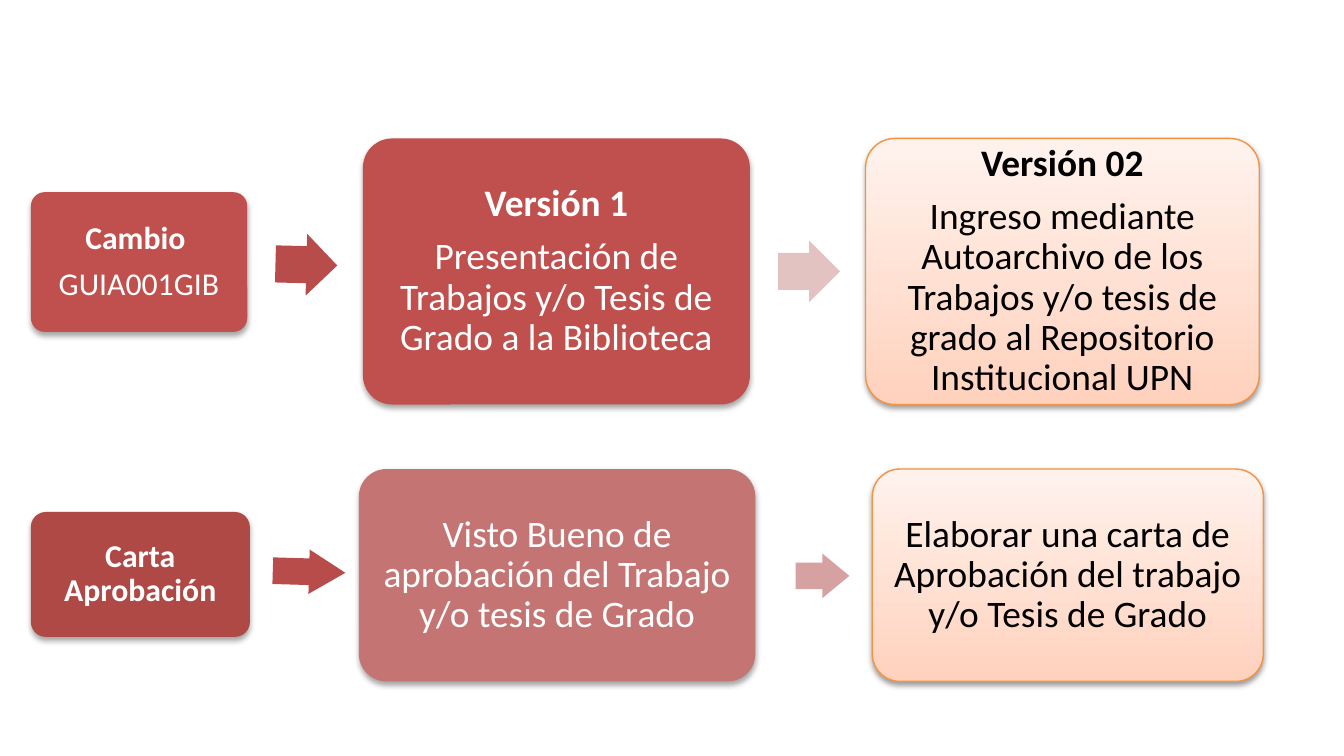
"""Build a slide comparing the earlier and new versions of two library procedures."""
from lxml import etree
from pptx import Presentation
from pptx.dml.color import RGBColor
from pptx.enum.shapes import MSO_SHAPE
from pptx.enum.text import MSO_ANCHOR, PP_ALIGN
from pptx.oxml.ns import qn
from pptx.util import Inches, Pt

ROUNDED, ARROW = MSO_SHAPE.ROUNDED_RECTANGLE, MSO_SHAPE.RIGHT_ARROW
MIDDLE, CENTER = MSO_ANCHOR.MIDDLE, PP_ALIGN.CENTER
FONT = "Calibri"
WIDTH = 10
HEIGHT = WIDTH * 9 / 16
COLORS = {
    "red": "C0504D", "dark red": "AE4946", "rose": "C47472",
    "arrow red": "B74C4A", "arrow pale": "E3C3C2", "arrow rose": "D6A1A1",
    "peach": "FFD2BD", "cream": "FFF2ED", "orange": "F69240",
    "white": "FFFFFF", "black": "000000",
}
TOPIC = {"size": 17, "inset": 0.11}
DETAIL = {"size": 20, "inset": 0.15}
NEW = {**DETAIL, "color": "black"}

# Each card: box, fill (None for the gradient), corner, (text, bold) lines, format
CARDS = [
    ((0.23, 1.43, 1.61, 1.04), "red", 0.1,
     [("Cambio ", True), ("GUIA001GIB", False)], TOPIC),
    ((2.7, 1.03, 2.88, 1.98), "red", 0.11,
     [("Versión 1", True),
      ("Presentación de Trabajos y/o Tesis de Grado a la Biblioteca", False)], DETAIL),
    ((6.44, 1.03, 2.93, 1.98), None, 0.11,
     [("Versión 02", True),
      ("Ingreso mediante Autoarchivo de los Trabajos y/o tesis de grado "
       "al Repositorio Institucional UPN", False)], NEW),
    ((0.23, 3.81, 1.63, 0.93), "dark red", 0.12, [("Carta Aprobación", True)], TOPIC),
    ((2.67, 3.49, 2.95, 1.58), "rose", 0.13,
     [("Visto Bueno de aprobación del Trabajo y/o tesis de Grado", False)], DETAIL),
    ((6.49, 3.49, 2.91, 1.58), None, 0.13,
     [("Elaborar una carta de Aprobación del trabajo y/o Tesis de Grado", False)], NEW),
]
ARROWS = [
    ((2.05, 1.74, 0.46, 0.46), "arrow red", 1.5),
    ((5.79, 1.79, 0.46, 0.46), "arrow pale", 0),
    ((2.03, 4.09, 0.54, 0.33), "arrow red", 1.7),
    ((5.92, 4.12, 0.4, 0.33), "arrow rose", 0),
]


def rgb(name):
    return RGBColor.from_string(COLORS[name])


def add_block(slide, preset, box, fill):
    block = slide.shapes.add_shape(preset, *map(Inches, box))
    block.shadow.inherit = False
    if fill:
        block.fill.solid()
        block.fill.fore_color.rgb = rgb(fill)
        block.line.fill.background()
    else:
        block.fill.gradient()
        block.fill.gradient_angle = 90
        for stop, name in zip(block.fill.gradient_stops, ("peach", "cream")):
            stop.color.rgb = rgb(name)
        block.line.color.rgb = rgb("orange")
        block.line.width = Pt(0.75)
    return block


def add_shadow(block, distance, opacity):
    effects = block._element.spPr.find(qn("a:effectLst"))
    shadow = etree.SubElement(effects, qn("a:outerShdw"), blurRad=str(Pt(3.1)),
                              dist=str(Pt(distance)), dir="5400000", rotWithShape="0")
    tint = etree.SubElement(shadow, qn("a:srgbClr"), val=COLORS["black"])
    etree.SubElement(tint, qn("a:alpha"), val=str(opacity * 1000))


def write(frame, lines, size, inset, color="white"):
    frame.word_wrap = True
    frame.vertical_anchor = MIDDLE
    frame.margin_left = frame.margin_right = Inches(inset)
    frame.margin_top = frame.margin_bottom = Inches(inset)
    for index, (text, bold) in enumerate(lines):
        paragraph = frame.add_paragraph() if index else frame.paragraphs[0]
        paragraph.alignment = CENTER
        paragraph.line_spacing = 0.9
        paragraph.space_after = Pt(round(size * 0.35))
        run = paragraph.add_run()
        run.text = text
        font = run.font
        font.name, font.size, font.bold = FONT, Pt(size), bold
        font.color.rgb = rgb(color)


def main():
    deck = Presentation()
    deck.slide_width, deck.slide_height = Inches(WIDTH), Inches(HEIGHT)
    slide = deck.slides.add_slide(deck.slide_layouts[6])
    for box, fill, corner, lines, style in CARDS:
        card = add_block(slide, ROUNDED, box, fill)
        card.adjustments[0] = corner
        add_shadow(card, *((1.8, 35) if fill else (1.6, 38)))
        corner_inset = 0.29 * corner * box[3]
        write(card.text_frame, lines, **{**style, "inset": style["inset"] - corner_inset})
    for box, fill, turn in ARROWS:
        arrow = add_block(slide, ARROW, box, fill)
        arrow.adjustments[0] = 0.6
        arrow.adjustments[1] = box[2] / 2 / box[3]
        arrow.rotation = turn
    deck.save("out.pptx")


if __name__ == "__main__":
    main()
